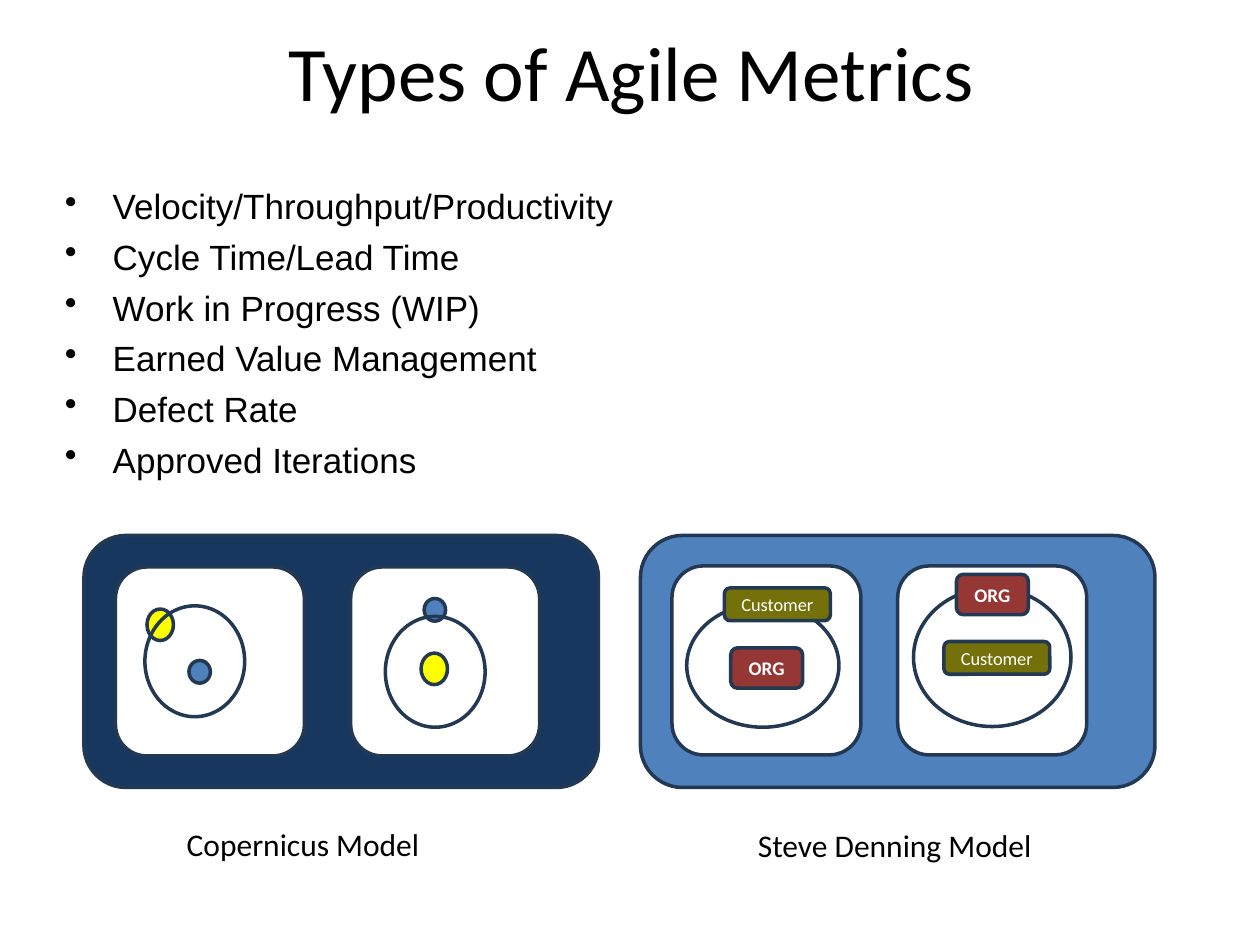
import pptx
import pptx.util
import pptx.dml.color
import pptx.enum.shapes
import pptx.enum.text
import pptx.oxml

COLORS = {
    "text": "000000", "white": "FFFFFF", "outline": "233953",
    "navy": "17375E", "blue": "4F81BD", "yellow": "FFFF00",
    "red": "953735", "olive": "74710A",
}
FORMATS = {
    "title": {"size": 44, "name": "Calibri", "color": "text"},
    "bullet": {"size": 20, "name": "Arial", "color": "text"},
    "caption": {"size": 18, "name": "Calibri", "color": "text"},
    "ORG": {"size": 11, "name": "Calibri", "color": "white", "bold": True},
    "Customer": {"size": 10.5, "name": "Calibri", "color": "white"},
}
LABELS = {"ORG": ("red", 6.84, 3.84), "Customer": ("olive", 10.08, 3.12)}
DOTS = {"blue": (2.04, 2.16), "yellow": (2.52, 3)}
COLUMNS, ROWS = 120, 90
ROUNDED = pptx.enum.shapes.MSO_SHAPE.ROUNDED_RECTANGLE
OVAL = pptx.enum.shapes.MSO_SHAPE.OVAL
ALIGN = pptx.enum.text.PP_ALIGN
ANCHOR = pptx.enum.text.MSO_ANCHOR


def rgb(name):
    return pptx.dml.color.RGBColor.from_string(COLORS[name])


class Deck:
    """Holds the style, the grid and the current slide."""

    def __init__(self, prs):
        self.cw, self.rh = prs.slide_width / COLUMNS, prs.slide_height / ROWS
        self.s = prs.slides.add_slide(prs.slide_layouts[5])

    def box(self, x, y, w, h):
        """Turns grid columns and rows into slide lengths."""
        return [round(v) for v in (x * self.cw, y * self.rh, w * self.cw, h * self.rh)]

    def add_text(self, p, text, style):
        r = p.add_run()
        r.text = text
        for key, value in FORMATS[style].items():
            if key == "color":
                r.font.color.rgb = rgb(value)
            else:
                setattr(r.font, key, pptx.util.Pt(value) if key == "size" else value)

    def title(self, text, *at):
        sp = self.s.shapes.title
        sp.left, sp.top, sp.width, sp.height = self.box(*at)
        tf = sp.text_frame
        tf.vertical_anchor = ANCHOR.TOP
        p = tf.paragraphs[0]
        p.alignment = ALIGN.CENTER
        self.add_text(p, text, "title")

    def bullets(self, items, *at):
        tf = self.s.shapes.add_textbox(*self.box(*at)).text_frame
        tf.word_wrap = True
        indent = pptx.util.Inches(0.38)
        for i, item in enumerate(items):
            p = tf.add_paragraph() if i else tf.paragraphs[0]
            pPr = p._p.get_or_add_pPr()
            pPr.set("marL", str(indent))
            pPr.set("indent", str(-indent))
            bullet = pptx.oxml.parse_xml(
                '<a:buChar xmlns:a="http://schemas.openxmlformats.org/'
                'drawingml/2006/main" char="•"/>')
            pPr.append(bullet)
            p.space_before = pptx.util.Pt(5 if i else 0)
            self.add_text(p, item, "bullet")

    def caption(self, text, *at):
        tf = self.s.shapes.add_textbox(*self.box(*at)).text_frame
        tf.word_wrap = False
        self.add_text(tf.paragraphs[0], text, "caption")

    def shape(self, kind, fill, *at):
        sp = self.s.shapes.add_shape(kind, *self.box(*at))
        sp.shadow.inherit = False
        if fill:
            sp.fill.solid()
            sp.fill.fore_color.rgb = rgb(fill)
        else:
            sp.fill.background()
        sp.line.color.rgb = rgb("outline")
        sp.line.width = pptx.util.Pt(2)
        return sp

    def orbit(self, *at):
        self.shape(OVAL, None, *at)

    def dot(self, color, x, y):
        self.shape(OVAL, color, x, y, *DOTS[color])

    def label(self, text, x, y):
        fill, w, h = LABELS[text]
        tf = self.shape(ROUNDED, fill, x, y, w, h).text_frame
        for side in ("left", "top", "right", "bottom"):
            setattr(tf, "margin_" + side, 0)
        tf.word_wrap = False
        tf.vertical_anchor = ANCHOR.MIDDLE
        p = tf.paragraphs[0]
        p.alignment = ALIGN.CENTER
        self.add_text(p, text, text)

    def model(self, fill, x, panel_y, panel_xs):
        """Draws a model's frame and its square white panels."""
        self.shape(ROUNDED, fill, x, 51, 49, 24)
        for panel_x in panel_xs:
            self.shape(ROUNDED, "white", panel_x, panel_y, 18, 18)


def main():
    prs = pptx.Presentation()
    prs.slide_width, prs.slide_height = pptx.util.Inches(10), pptx.util.Inches(7.5)
    d = Deck(prs)
    d.title("Types of Agile Metrics ", 7, 1.7, 108, 15)
    d.bullets(["Velocity/Throughput/Productivity", "Cycle Time/Lead Time",
               "Work in Progress (WIP)", "Earned Value Management",
               "Defect Rate", "Approved Iterations"], 5, 17, 108, 30)

    d.model("navy", 8, 54, (11, 33.4))
    for color, x, y in (("blue", 18, 62.9), ("blue", 40.4, 57),
                        ("yellow", 14, 58), ("yellow", 40.1, 62.2)):
        d.dot(color, x, y)
    for x, y in ((13.8, 57.7), (36.7, 58.7)):
        d.orbit(x, y, 9.5, 10.56)
    d.caption("Copernicus Model", 16.6, 78, 24.8, 4.8)

    d.model("blue", 61, 53.9, (64, 85.5))
    d.orbit(65.4, 57.5, 14.5, 11.76)
    d.orbit(87, 56, 15, 13.2)
    for text, x, y in (("ORG", 69.6, 61.7), ("Customer", 69, 56),
                       ("ORG", 91.1, 54.7), ("Customer", 89.9, 61.1)):
        d.label(text, x, y)
    d.caption("Steve Denning Model", 71, 78.1, 28.8, 4.8)
    prs.save("out.pptx")


if __name__ == "__main__":
    main()
